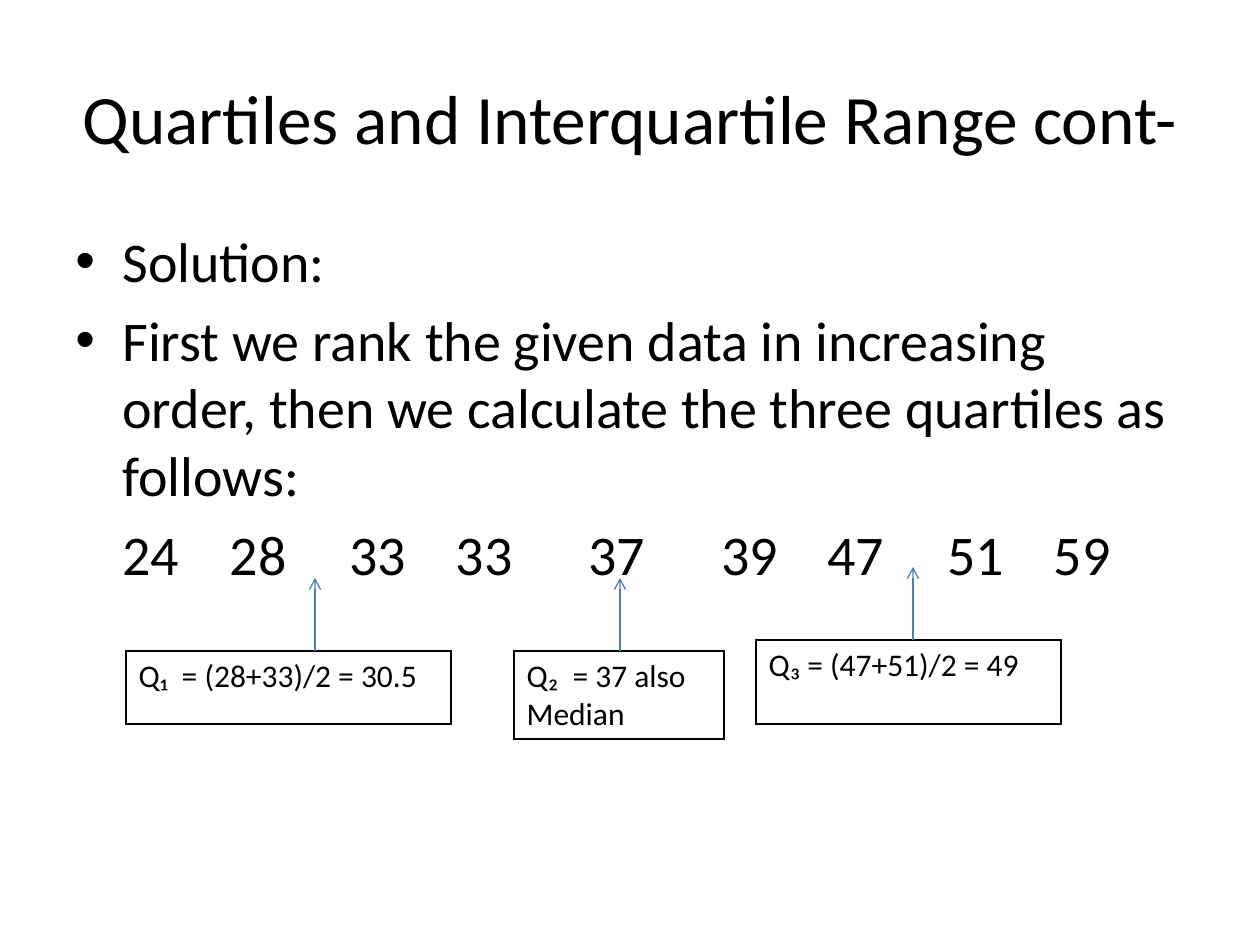
from dataclasses import dataclass

from lxml import etree
from pptx import Presentation
from pptx.dml.color import RGBColor
from pptx.enum import shapes, text
from pptx.oxml import ns
from pptx.util import Emu, Pt


@dataclass(frozen=True)
class Theme:
    font: str = "Calibri"
    ink: str = "000000"
    arrow: str = "4B7EBC"
    title: float = 39.6
    body: float = 32
    note: float = 18
    gap: float = 7


THEME = Theme()
# Each ranked value and its left edge
RANKS = [(24, 123), (28, 231), (33, 351), (33, 458), (37, 591),
         (39, 724), (47, 831), (51, 951), (59, 1058)]
# Note text, box and the x of its arrow
NOTES = [("Q₂  = 37 also Median", (514, 651, 210, 84), 620),
         ("Q₁  = (28+33)/2 = 30.5", (126, 651, 325, 73), 315),
         ("Q₃ = (47+51)/2 = 49", (756, 640, 305, 84), 913)]
RISE = 73
INDENT = 47
PAIR = 57   # width of two digits in body type
SPACE = 13  # width of a space in body type


def px(n):
    return Emu(round(n * 914400 / 126))


def sub(node, tag, **attrs):
    return etree.SubElement(node, ns.qn(tag), attrs)


def write(para, words, size):
    run = para.add_run()
    run.text = words
    run.font.name = THEME.font
    run.font.size = Pt(size)
    run.font.bold = False
    run.font.color.rgb = RGBColor.from_string(THEME.ink)
    return run


def frame(slide, box):
    area = slide.shapes.add_textbox(*map(px, box)).text_frame
    area.word_wrap = True
    return area


def title(slide, box, words):
    area = frame(slide, box)
    area.vertical_anchor = text.MSO_ANCHOR.MIDDLE
    para = area.paragraphs[0]
    para.alignment = text.PP_ALIGN.CENTER
    write(para, words, THEME.title)


def indent(para, first):
    props = para._p.get_or_add_pPr()
    props.set("marL", str(px(INDENT)))
    props.set("indent", str(px(first)))
    return props


def bullet(para):
    props = indent(para, -INDENT)
    sub(props, "a:buFont", typeface="Arial")
    sub(props, "a:buChar", char="•")


def ranks(para):
    """Write the ranked values, each space widened to reach the next one."""
    sub(indent(para, 0), "a:buNone")
    for (value, x), (_, after) in zip(RANKS, RANKS[1:]):
        write(para, str(value), THEME.body)
        space = write(para, " ", THEME.body)
        extra = px(after - x - PAIR - SPACE).pt
        space.font._element.set("spc", str(round(extra * 100)))
    write(para, str(RANKS[-1][0]), THEME.body)


def body(slide, box, points):
    area = frame(slide, box)
    paras = [area.paragraphs[0]] + [area.add_paragraph() for _ in points]
    for para in paras:
        para.space_before = Pt(THEME.gap)
    for para, words in zip(paras, points):
        bullet(para)
        write(para, words, THEME.body)
    ranks(paras[-1])


def border(cell):
    props = cell._tc.get_or_add_tcPr()
    for spot, side in enumerate(("a:lnL", "a:lnR", "a:lnT", "a:lnB")):
        line = sub(props, side, w=str(Pt(1)))
        sub(sub(line, "a:solidFill"), "a:srgbClr", val=THEME.ink)
        props.insert(spot, line)


def arrow(slide, x, base):
    line = slide.shapes.add_connector(
        shapes.MSO_CONNECTOR.STRAIGHT, px(x), px(base), px(x), px(base - RISE))
    line.line.color.rgb = RGBColor.from_string(THEME.arrow)
    line.line.width = Pt(0.75)
    sub(line.line._get_or_add_ln(), "a:tailEnd", type="arrow")
    sub(line._element.spPr, "a:effectLst")


def note(slide, box, words, x):
    """Place a one-cell table with an arrow rising from its top edge."""
    table = slide.shapes.add_table(1, 1, *map(px, box)).table
    table.first_row = table.horz_banding = False
    cell = table.cell(0, 0)
    cell.fill.background()
    border(cell)
    write(cell.text_frame.paragraphs[0], words, THEME.note)
    arrow(slide, x, box[1])


def main():
    deck = Presentation()
    deck.slide_width, deck.slide_height = px(1260), px(945)
    slide = deck.slides.add_slide(deck.slide_layouts[6])
    title(slide, (63, 38, 1134, 157), "Quartiles and Interquartile Range cont-")
    body(slide, (63, 220, 1134, 624), [
        "Solution:",
        "First we rank the given data in increasing order, "
        "then we calculate the three quartiles as follows:"])
    for words, box, x in NOTES:
        note(slide, box, words, x)
    deck.save("out.pptx")


if __name__ == "__main__":
    main()
